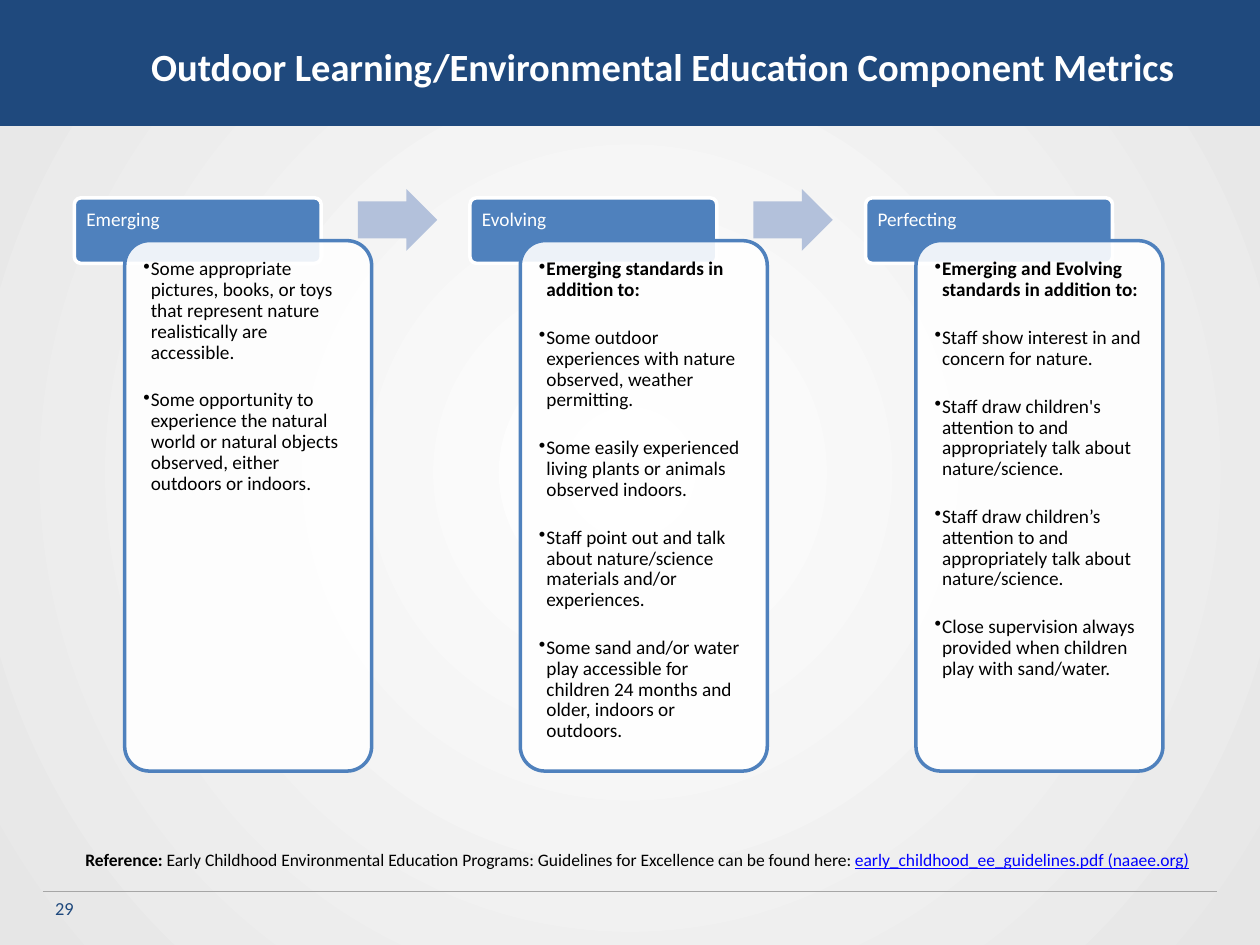
from lxml import etree
from pptx import Presentation
from pptx.dml.color import RGBColor
from pptx.enum.shapes import MSO_CONNECTOR, MSO_SHAPE
from pptx.enum.text import MSO_ANCHOR, MSO_AUTO_SIZE, PP_ALIGN
from pptx.oxml.ns import qn
from pptx.util import Inches, Pt

RECT, ROUNDED = MSO_SHAPE.RECTANGLE, MSO_SHAPE.ROUNDED_RECTANGLE
ARROW, STRAIGHT = MSO_SHAPE.RIGHT_ARROW, MSO_CONNECTOR.STRAIGHT
LEFT, TOP, MIDDLE = PP_ALIGN.LEFT, MSO_ANCHOR.TOP, MSO_ANCHOR.MIDDLE
NO_FIT = MSO_AUTO_SIZE.NONE

NAVY = RGBColor(0x1F, 0x49, 0x7D)
BLUE = RGBColor(0x4F, 0x81, 0xBD)
PALE_BLUE = RGBColor(0xB3, 0xC1, 0xDB)
LINK_BLUE = RGBColor(0x00, 0x00, 0xFF)
WHITE = RGBColor(0xFF, 0xFF, 0xFF)
SMOKE = RGBColor(0xE6, 0xE6, 0xE6)
GRAY = RGBColor(0xA6, 0xA6, 0xA6)
BLACK = RGBColor(0x00, 0x00, 0x00)

STAGES = [
    ("Emerging", None, [
        "Some appropriate pictures, books, or toys that represent nature realistically are accessible.",
        "Some opportunity to experience the natural world or natural objects observed, either outdoors or indoors.",
    ]),
    ("Evolving", "Emerging standards in addition to:", [
        "Some outdoor experiences with nature observed, weather permitting.",
        "Some easily experienced living plants or animals observed indoors.",
        "Staff point out and talk about nature/science materials and/or experiences.",
        "Some sand and/or water play accessible for children 24 months and older, indoors or outdoors.",
    ]),
    ("Perfecting", "Emerging and Evolving standards in addition to:", [
        "Staff show interest in and concern for nature.",
        "Staff draw children's attention to and appropriately talk about nature/science.",
        "Staff draw children’s attention to and appropriately talk about nature/science.",
        "Close supervision always provided when children play with sand/water.",
    ]),
]
STAGE_LEFT, STAGE_PITCH = 0.59, 3.14


class SlideBuilder:
    font = "Calibri"

    def __init__(self, s):
        self.s = s

    def set_all(self, obj, values):
        for name, value in values.items():
            setattr(obj, name, value)

    def background(self):
        fill = self.s.background.fill
        fill.gradient()
        for stop, color, pos in zip(fill.gradient_stops, (WHITE, SMOKE), (0, 1)):
            stop.color.rgb = color
            stop.position = pos
        lin = next(self.s.element.iter(qn("a:lin")))
        circle = etree.Element(qn("a:path"), {"path": "circle"})
        etree.SubElement(circle, qn("a:fillToRect"), dict.fromkeys("ltrb", "50000"))
        lin.getparent().replace(lin, circle)

    def frame(self, sp, inset=None, **values):
        tf = sp.text_frame
        self.set_all(tf, {"word_wrap": True, "auto_size": NO_FIT,
                          "vertical_anchor": TOP, **values})
        if inset:
            sides = ("margin_left", "margin_top", "margin_right", "margin_bottom")
            self.set_all(tf, dict(zip(sides, map(Inches, inset))))
        return tf

    def run(self, p, text, size, color, **values):
        r = p.add_run()
        r.text = text
        self.set_all(r.font, {"name": self.font, "size": Pt(size), **values})
        r.font.color.rgb = color

    def title(self, box, text):
        sp = self.s.shapes.title
        self.set_all(sp, dict(zip(("left", "top", "width", "height"), map(Inches, box))))
        sp.element.getparent().append(sp.element)
        p = self.frame(sp, word_wrap=False, vertical_anchor=MIDDLE).paragraphs[0]
        p.alignment = LEFT
        self.run(p, text, 22, WHITE, bold=True)

    def text(self, box, runs):
        tf = self.frame(self.s.shapes.add_textbox(*map(Inches, box)))
        for text, size, color, values in runs:
            self.run(tf.paragraphs[0], text, size, color, **values)

    def shape(self, kind, box, color, line=None, adjustments=(), alpha=None):
        sp = self.s.shapes.add_shape(kind, *map(Inches, box))
        sp.shadow.inherit = False
        sp.fill.solid()
        sp.fill.fore_color.rgb = color
        if alpha:
            solid = sp.element.spPr.find(qn("a:solidFill"))
            etree.SubElement(solid[0], qn("a:alpha"), val=str(alpha * 1000))
        if line:
            sp.line.color.rgb = line
            sp.line.width = Pt(2)
        else:
            sp.line.fill.background()
        for i, value in enumerate(adjustments):
            sp.adjustments[i] = value
        return sp

    def line(self, x1, y1, x2, y2, color, width):
        cn = self.s.shapes.add_connector(STRAIGHT, *map(Inches, (x1, y1, x2, y2)))
        cn.line.color.rgb = color
        cn.line.width = Pt(width)
        etree.SubElement(cn.element.spPr, qn("a:effectLst"))

    def header(self, box, text):
        sp = self.shape(ROUNDED, box, BLUE, WHITE, [0.1])
        p = self.frame(sp, (0.08, 0.08, 0.08, 0.05)).paragraphs[0]
        self.set_all(p, {"alignment": LEFT, "line_spacing": 0.9})
        self.run(p, text, 11, WHITE)

    def panel(self, box, lead, items):
        sp = self.shape(ROUNDED, box, WHITE, BLUE, [0.1], alpha=90)
        tf = self.frame(sp, (0.09,) * 4)
        lines = ([lead] if lead else []) + items
        for i, text in enumerate(lines):
            p = tf.add_paragraph() if i else tf.paragraphs[0]
            pPr = p._p.get_or_add_pPr()
            pPr.set("marL", str(Inches(0.06)))
            pPr.set("indent", str(-Inches(0.06)))
            etree.SubElement(pPr, qn("a:buChar"), char="•")
            self.set_all(p, {"alignment": LEFT, "line_spacing": 0.9,
                             "space_after": Pt(15.5)})
            self.run(p, text, 11, BLACK, bold=text == lead)


def main():
    prs = Presentation()
    prs.slide_width, prs.slide_height = Inches(10), Inches(7.5)
    b = SlideBuilder(prs.slides.add_slide(prs.slide_layouts[5]))
    b.background()
    b.line(0.34, 7.07, 9.66, 7.07, GRAY, 0.25)
    b.shape(RECT, (0, -0.01, 10, 1.01), NAVY)
    b.text((0.34, 7.07, 2.33, 0.4), [("29", 10.5, NAVY, {})])
    b.title((1.1, 0.29, 8.42, 0.47),
            "Outdoor Learning/Environmental Education Component Metrics")
    for i, (name, lead, items) in enumerate(STAGES):
        x = STAGE_LEFT + i * STAGE_PITCH
        b.header((x, 1.57, 1.96, 0.52), name)
        b.panel((x + 0.4, 1.91, 1.96, 4.21), lead, items)
        if i < len(STAGES) - 1:
            b.shape(ARROW, (x + 2.25, 1.5, 0.63, 0.49), PALE_BLUE, adjustments=[0.6, 0.5])
    b.text((0.58, 6.69, 9.16, 0.27), [
        ("Reference:", 10, BLACK, {"bold": True}),
        (" Early Childhood Environmental Education Programs: Guidelines for Excellence"
         " can be found here: ", 10, BLACK, {}),
        ("early_childhood_ee_guidelines.pdf (naaee.org)", 10, LINK_BLUE, {"underline": True}),
    ])
    prs.save("out.pptx")


if __name__ == "__main__":
    main()
